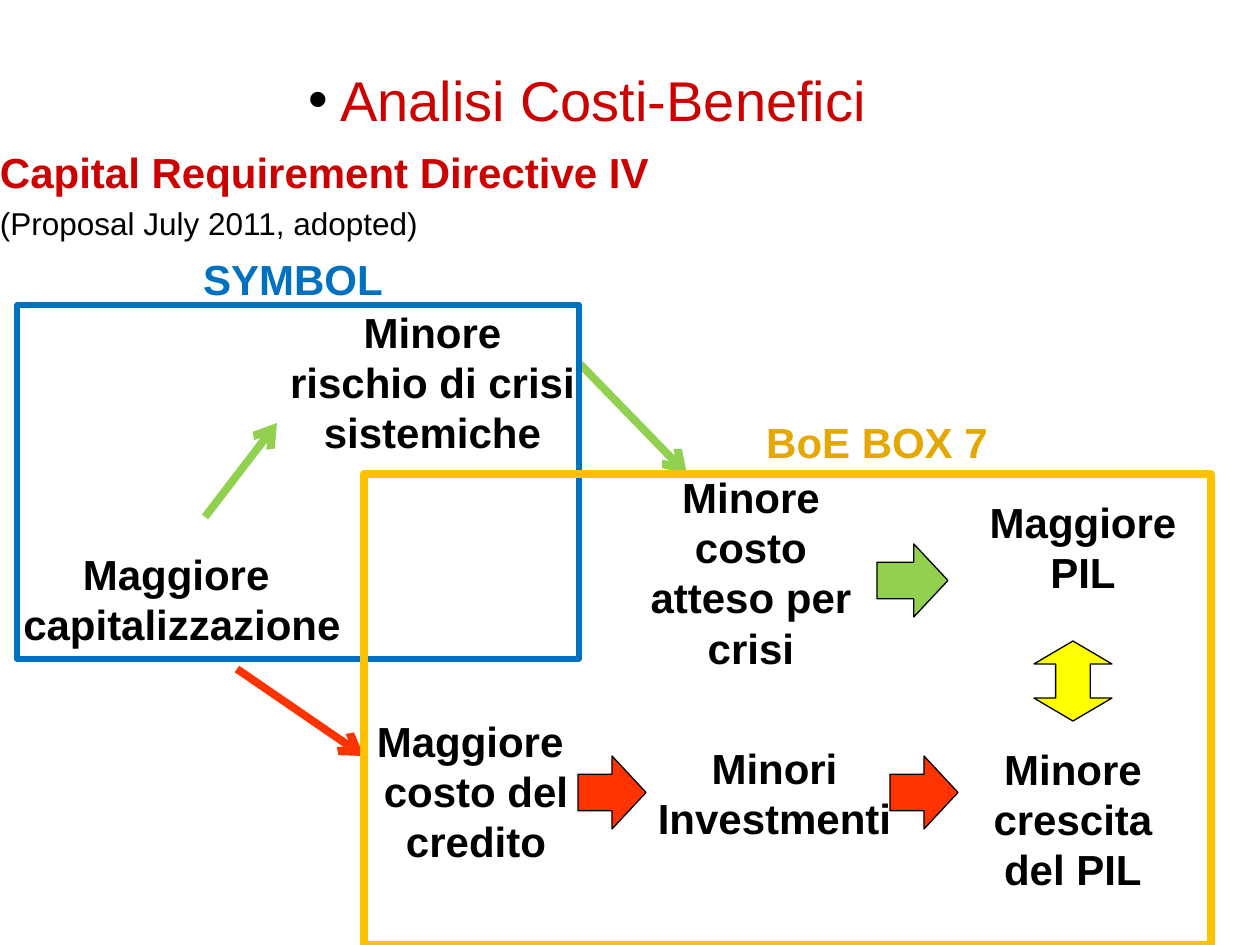
from lxml.etree import SubElement
from pptx import Presentation
from pptx.dml.color import RGBColor
from pptx.enum.shapes import MSO_CONNECTOR as Connector, MSO_SHAPE as Shape
from pptx.enum.text import PP_ALIGN as Align
from pptx.oxml.ns import qn
from pptx.util import Pt

PX = 914400 / 126
COLORS = {"black": "000000", "red": "CC0000", "blue": "0070C0", "gold": "FFC000",
          "ochre": "E4A800", "green": "92D050", "orange": "FF3300", "yellow": "FFFF00"}


def emu(*lengths):
    return [round(length * PX) for length in lengths]


def add_text(place, lines, margins=None, **paragraph_format):
    """Add a text box; each line is (text, size, color, bold)."""
    box = slide.shapes.add_textbox(*emu(*place))
    frame = box.text_frame
    frame.word_wrap = True
    if margins is not None:
        for side in ("left", "top", "right", "bottom"):
            setattr(frame, f"margin_{side}", margins)
    for index, (text, size, color, bold) in enumerate(lines):
        para = frame.add_paragraph() if index else frame.paragraphs[0]
        for name, value in paragraph_format.items():
            setattr(para, name, value)
        span = para.add_run()
        span.text = text
        for name, value in {"name": "Arial", "size": Pt(size), "bold": bold}.items():
            setattr(span.font, name, value)
        span.font.color.rgb = RGBColor.from_string(COLORS[color])
    return box


deck = Presentation()
deck.slide_width, deck.slide_height = emu(1260, 945)
slide = deck.slides.add_slide(deck.slide_layouts[6])

# Steps of the causal chain
steps = [
    ((0, 542, 364, 115), ["Maggiore ", "capitalizzazione"]),
    ((277, 300, 311, 165), ["Minore rischio di crisi sistemiche"]),
    ((364, 709, 224, 165), ["Maggiore  costo del credito"]),
    ((625, 465, 252, 217), ["Minore costo atteso per crisi"]),
    ((638, 736, 273, 115), ["Minori Investmenti"]),
    ((957, 490, 252, 115), ["Maggiore PIL"]),
    ((947, 737, 252, 165), ["Minore crescita del PIL"]),
]
for place, texts in steps:
    add_text(place, [(text, 24, "black", True) for text in texts], alignment=Align.CENTER)

# Thin arrows
for ends, color in [
    ((205, 517, 277, 423), "green"),
    ((237, 669, 364, 756), "orange"),
    ((580, 364, 687, 474), "green"),
]:
    arrow = slide.shapes.add_connector(Connector.STRAIGHT, *emu(*ends))
    arrow.line.width = Pt(4.5)
    arrow.line.color.rgb = RGBColor.from_string(COLORS[color])
    SubElement(arrow.line._get_or_add_ln(), qn("a:tailEnd"), type="arrow")
    SubElement(arrow._element.spPr, qn("a:effectLst"))

# Block arrows and model frames; adjustments in thousandths of a percent
for kind, place, fill, line, width, adjustments in [
    (Shape.RIGHT_ARROW, (877, 544, 71, 73), "green", "black", 0.75, (50000, 48200)),
    (Shape.RIGHT_ARROW, (578, 756, 68, 73), "orange", "black", 0.75, (50000, 50000)),
    (Shape.RIGHT_ARROW, (890, 756, 68, 73), "orange", "black", 0.75, (50000, 50000)),
    (Shape.UP_DOWN_ARROW, (1034, 641, 78, 80), "yellow", "black", 0.75, (44300, 29400)),
    (Shape.RECTANGLE, (17, 305, 562, 354), None, "blue", 3, ()),
    (Shape.RECTANGLE, (364, 474, 847, 471), None, "gold", 4.5, ()),
]:
    block = slide.shapes.add_shape(kind, *emu(*place))
    block.shadow.inherit = False
    # Written as XML so that both guides of the double arrow get their own name
    guides = block._element.spPr.find(qn("a:prstGeom")).find(qn("a:avLst"))
    for guide in list(guides):
        guides.remove(guide)
    for number, value in enumerate(adjustments, start=1):
        SubElement(guides, qn("a:gd"), name=f"adj{number}", fmla=f"val {value}")
    if fill:
        block.fill.solid()
        block.fill.fore_color.rgb = RGBColor.from_string(COLORS[fill])
    else:
        block.fill.background()
    block.line.width = Pt(width)
    block.line.color.rgb = RGBColor.from_string(COLORS[line])

# Frame captions
add_text((75, 247, 436, 63), [("SYMBOL", 24, "blue", True)], alignment=Align.CENTER)
add_text((659, 410, 436, 63), [("BoE BOX 7", 24, "ochre", True)], alignment=Align.CENTER)

# Directive heading
add_text((0, 136, 1260, 171),
         [("Capital Requirement Directive IV", 24, "red", True),
          ("(Proposal July 2011, adopted)", 18, "black", False)],
         margins=0, line_spacing=1.2)

# Title with a black bullet
title = add_text((309, 52, 702, 79), [("Analisi Costi-Benefici", 32, "red", False)],
                 margins=0, line_spacing=1.2)
properties = title.text_frame.paragraphs[0]._p.get_or_add_pPr()
indent = emu(31)[0]
properties.set("marL", str(indent))
properties.set("indent", str(-indent))
bullet_color = SubElement(properties, qn("a:buClr"))
SubElement(bullet_color, qn("a:srgbClr"), val=COLORS["black"])
SubElement(properties, qn("a:buFont"), typeface="Arial")
SubElement(properties, qn("a:buChar"), char="•")

deck.save("out.pptx")
